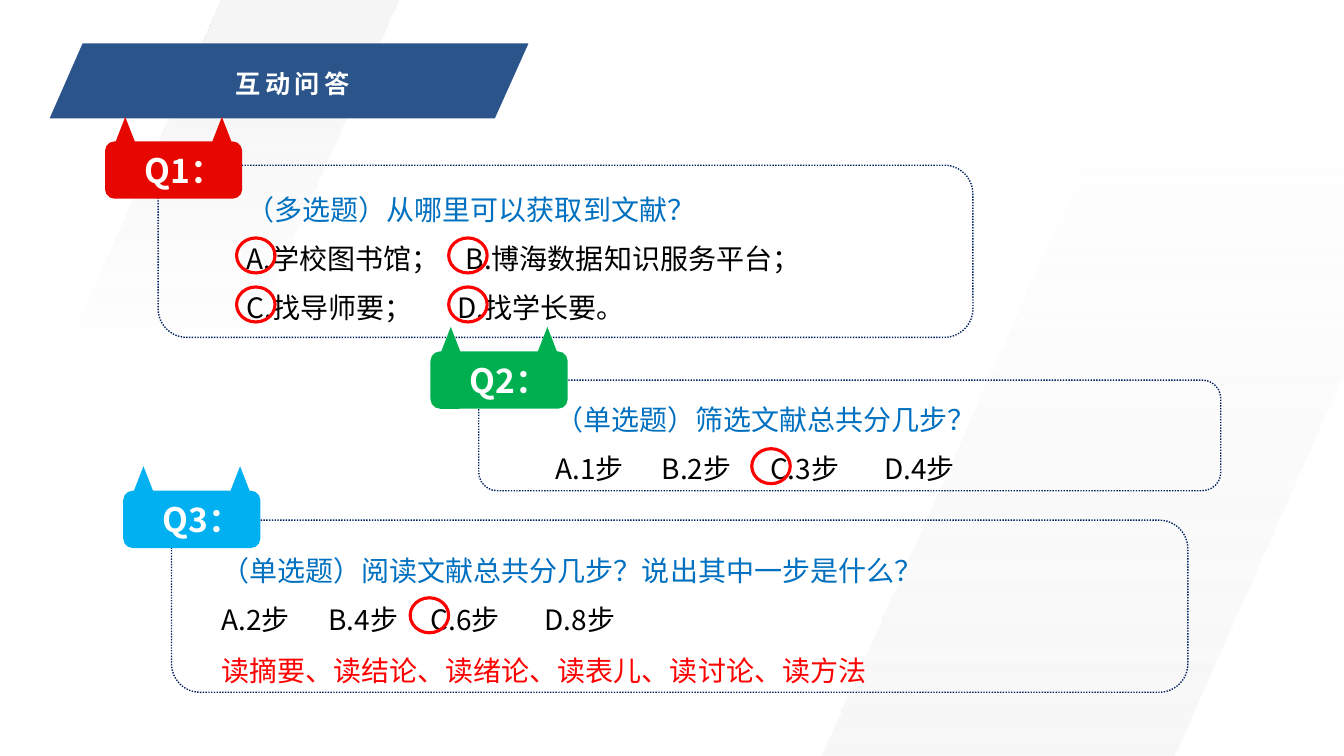
import pptx
import pptx.util
import pptx.dml.color
import pptx.enum.dml
import pptx.enum.shapes
import pptx.enum.text
import pptx.oxml.ns
from lxml import etree

Pt = pptx.util.Pt
qn = pptx.oxml.ns.qn
SHAPE = pptx.enum.shapes.MSO_SHAPE
FONT = "Noto Sans CJK SC"
COLORS = {
    "band": "F5F5F5", "banner": "2A548A", "outline": "002060", "white": "FFFFFF",
    "question": "0070C0", "answer": "000000", "mark": "FF0000",
    "red": "E70701", "green": "00B050", "blue": "00B0F0",
}
RGB = {name: pptx.dml.color.RGBColor.from_string(c) for name, c in COLORS.items()}

prs = pptx.Presentation()
prs.slide_width, prs.slide_height = Pt(960), Pt(540)
s = prs.slides.add_slide(prs.slide_layouts[6])


def add_shape(kind, box, fill=None, line=None, width=1):
    sp = s.shapes.add_shape(kind, *[Pt(v) for v in box])
    sp.shadow.inherit = False
    if fill:
        sp.fill.solid()
        sp.fill.fore_color.rgb = RGB[fill]
    else:
        sp.fill.background()
    if line:
        sp.line.color.rgb = RGB[line]
        sp.line.width = Pt(width)
    else:
        sp.line.fill.background()
    return sp


def add_text(box, lines, size, bold=False, wrap=True, spacing=None, tabs=()):
    """Add a text box from (text, colour) lines; tab stops are in points."""
    tf = s.shapes.add_textbox(*[Pt(v) for v in box]).text_frame
    tf.word_wrap = wrap
    for i, (text, color) in enumerate(lines):
        p = tf.paragraphs[0] if i == 0 else tf.add_paragraph()
        p.line_spacing = spacing
        if "\t" in text:
            tab_list = etree.SubElement(p._p.get_or_add_pPr(), qn("a:tabLst"))
            for pos in tabs[i]:
                etree.SubElement(tab_list, qn("a:tab"), pos=str(Pt(pos)), algn="l")
        r = p.add_run()
        r.text = text
        for key, value in {"name": FONT, "size": Pt(size), "bold": bold}.items():
            setattr(r.font, key, value)
        r.font.color.rgb = RGB[color]
        etree.SubElement(r._r.get_or_add_rPr(), qn("a:ea"), typeface=FONT)
    return tf


# Slanted background bands: outline, then (position, alpha) of the gradient stops
bands = [
    ([(805, 47.5), (1057, 47.5), (839, 540), (587, 540)], [(0.09, 0), (1, 76)]),
    ([(158.5, 0), (285, 0), (175, 248), (49, 248)], [(0.09, 100), (1, 0)]),
]
banner = [(59, 31), (377.5, 31), (353.5, 84.5), (35.5, 84.5)]
for points, stops in bands + [(banner, None)]:
    pen = s.shapes.build_freeform(Pt(points[0][0]), Pt(points[0][1]))
    pen.add_line_segments([(Pt(x), Pt(y)) for x, y in points[1:]], close=True)
    sp = pen.convert_to_shape()
    sp.shadow.inherit = False
    sp.line.fill.background()
    if not stops:
        sp.fill.solid()
        sp.fill.fore_color.rgb = RGB["banner"]
        continue
    sp.fill.gradient()
    sp.fill.gradient_angle = 270
    for stop, (position, _) in zip(sp.fill.gradient_stops, stops):
        stop.position = position
        stop.color.rgb = RGB["band"]
    for clr, (_, alpha) in zip(sp._element.spPr.iter(qn("a:srgbClr")), stops):
        etree.SubElement(clr, qn("a:alpha"), val=str(alpha * 1000))

tf = add_text((66, 47.5, 286, 37.5), [("互动问答", "white")], 18, bold=True, spacing=0.9)
tf.paragraphs[0].alignment = pptx.enum.text.PP_ALIGN.CENTER
tf.paragraphs[0].runs[0].font._element.set("spc", "300")

# Card box, badge corner, badge colour, text box, lines, tab stops of each line
questions = [
    ((113, 118, 582, 123), (75, 101), "red", (169, 123, 470, 113),
     ["（多选题）从哪里可以获取到文献？",
      "A.学校图书馆；\tB.博海数据知识服务平台；",
      "C.找导师要；\tD.找学长要。"],
     [(), (156.5,), (150.5,)]),
    ((342, 271.5, 530, 79), (307.5, 251), "green", (389.5, 273, 470, 78),
     ["（单选题）筛选文献总共分几步？", "A.1步\tB.2步\tC.3步\tD.4步"],
     [(), (76, 153.5, 235)]),
    ((122.5, 371.5, 726, 123), (88, 350.5), "blue", (151, 381, 697, 78),
     ["（单选题）阅读文献总共分几步？说出其中一步是什么？",
      "A.2步\tB.4步\tC.6步\tD.8步"],
     [(), (76.5, 149.5, 231)]),
]
for number, (card, (x, y), color, box, lines, tabs) in enumerate(questions, 1):
    sp = add_shape(SHAPE.ROUNDED_RECTANGLE, card, line="outline")
    sp.line.dash_style = pptx.enum.dml.MSO_LINE.ROUND_DOT
    add_shape(SHAPE.ROUNDED_RECTANGLE, (x, y, 98, 41), fill=color)
    for ear in (7.5, 76.5):
        add_shape(SHAPE.ISOSCELES_TRIANGLE, (x + ear, y - 17.5, 14, 18), fill=color)
    add_text((x + 21, y + 2.5, 73, 36), [(f"Q{number}：", "white")], 24, bold=True, wrap=False)
    colored = [(text, "answer" if i else "question") for i, text in enumerate(lines)]
    add_text(box, colored, 20, spacing=Pt(35), tabs=tabs)

add_text((151, 452, 479, 42.5), [("读摘要、读结论、读绪论、读表儿、读讨论、读方法", "mark")],
         20, wrap=False, spacing=Pt(35))

# Rings around the right answers
rings = [(x, y) for x in (169, 320.5) for y in (170, 205)] + [(537, 320.5), (293, 427)]
for x, y in rings:
    add_shape(SHAPE.OVAL, (x, y, 27.5, 25), line="mark", width=2.25)

prs.save("out.pptx")
